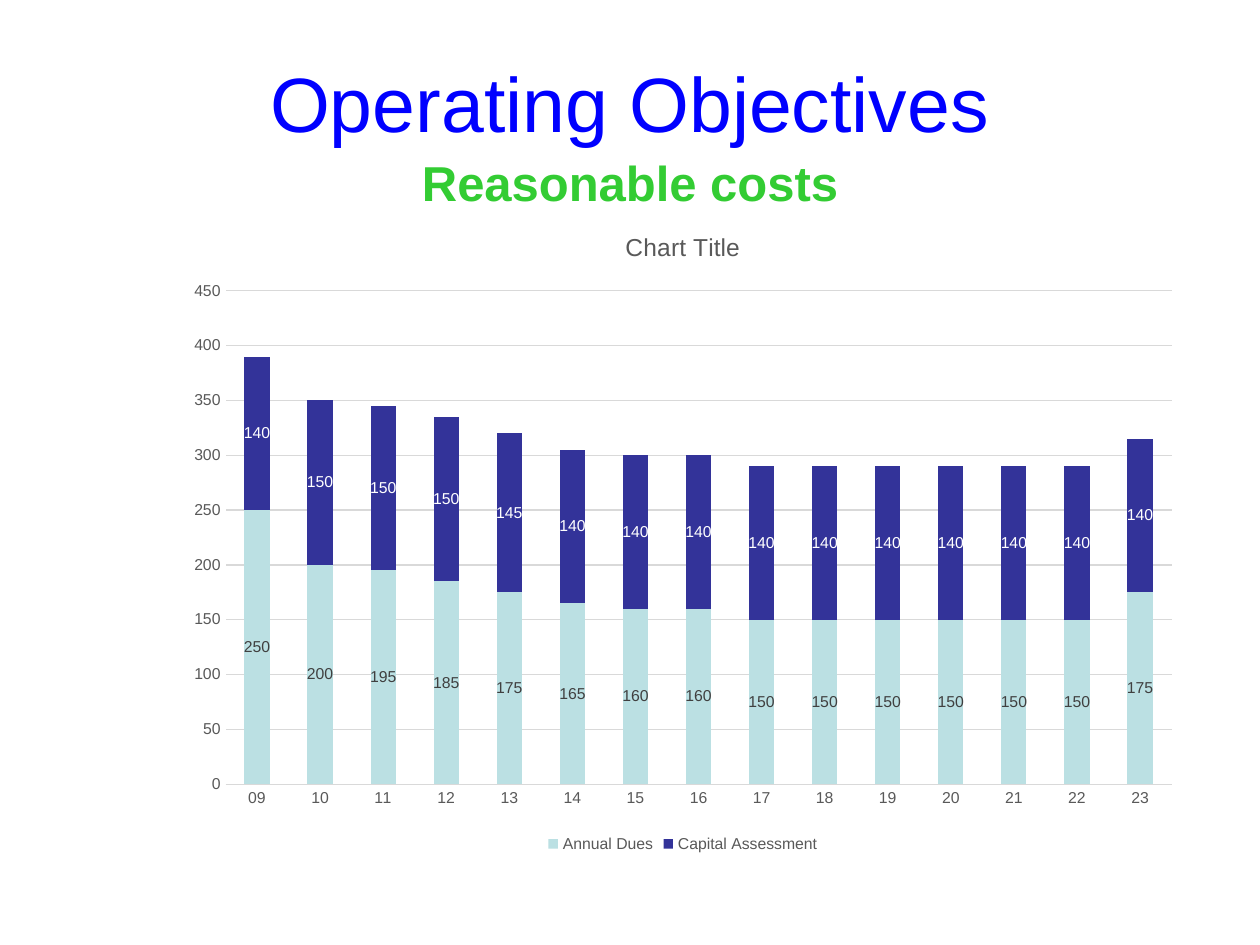
from pptx import Presentation
from pptx.chart.data import CategoryChartData
from pptx.dml.color import RGBColor
from pptx.enum.chart import XL_CHART_TYPE, XL_LABEL_POSITION, XL_LEGEND_POSITION, XL_TICK_MARK
from pptx.enum.text import MSO_ANCHOR, MSO_AUTO_SIZE, PP_ALIGN
from pptx.oxml.xmlchemy import OxmlElement
from pptx.util import Inches, Pt

STACKED = XL_CHART_TYPE.COLUMN_STACKED
CENTER_LABEL = XL_LABEL_POSITION.CENTER
BOTTOM = XL_LEGEND_POSITION.BOTTOM
NO_TICK = XL_TICK_MARK.NONE
CENTER = PP_ALIGN.CENTER

# Content
TITLE = "Operating Objectives"
SUBTITLE = "Reasonable costs"
CHART_TITLE = "Chart Title"
YEARS = [f"{year:02d}" for year in range(9, 24)]
SERIES = [
    ("Annual Dues", "dues", "dark_label",
     [250, 200, 195, 185, 175, 165, 160, 160] + [150] * 6 + [175]),
    ("Capital Assessment", "capital", "light_label",
     [140, 150, 150, 150, 145] + [140] * 10),
]
COLORS = {
    "title": "0000FF", "subtitle": "33CC33", "axis": "595959", "grid": "D9D9D9",
    "dues": "BBE0E3", "capital": "333399",
    "dark_label": "404040", "light_label": "FFFFFF",
}

# Left, top, width, height in inches
TITLE_AREA = (0.5, 0.33, 9, 0.95)
BODY_AREA = (0.5, 1.25, 9, 5.83)
CHART_AREA = (1.38, 1.64, 8.08, 5.17)


def color(name):
    return RGBColor.from_string(COLORS[name])


def style_font(font, size, color_name, bold=False):
    for name, value in {"name": "Arial", "size": Pt(size), "bold": bold}.items():
        setattr(font, name, value)
    font.color.rgb = color(color_name)


def style_line(line):
    line.color.rgb = color("grid")
    line.width = Pt(0.75)


def fill_placeholder(box, area, text, anchor, size, color_name, bold=False):
    for name, value in zip(("left", "top", "width", "height"), area):
        setattr(box, name, Inches(value))
    frame = box.text_frame
    frame.text = text
    frame.word_wrap = True
    frame.auto_size = MSO_AUTO_SIZE.NONE
    frame.vertical_anchor = anchor
    para = frame.paragraphs[0]
    para.alignment = CENTER
    style_font(para.runs[0].font, size, color_name, bold)
    return para


deck = Presentation()
deck.slide_width, deck.slide_height = Inches(10), Inches(7.5)
page = deck.slides.add_slide(deck.slide_layouts[1])

# Title and subtitle
fill_placeholder(page.shapes.title, TITLE_AREA, TITLE, MSO_ANCHOR.MIDDLE, 44, "title")
para = fill_placeholder(page.placeholders[1], BODY_AREA, SUBTITLE,
                        MSO_ANCHOR.TOP, 28, "subtitle", bold=True)
para.line_spacing = 0.8
para.space_before = Pt(5.6)
properties = para._p.get_or_add_pPr()
properties.set("marL", "0")
properties.set("indent", "0")
properties.append(OxmlElement("a:buNone"))

# Stacked column chart
data = CategoryChartData()
data.categories = YEARS
for name, _, _, values in SERIES:
    data.add_series(name, values)
chart = page.shapes.add_chart(STACKED, *map(Inches, CHART_AREA), data).chart
style_font(chart.font, 10, "axis")

chart.has_title = True
chart.chart_title.text_frame.text = CHART_TITLE
style_font(chart.chart_title.text_frame.paragraphs[0].runs[0].font, 14, "axis")
chart.chart_title.include_in_layout = False

chart.has_legend = True
chart.legend.position = BOTTOM
chart.legend.include_in_layout = False
style_font(chart.legend.font, 9, "axis")

# Axes
for axis in (chart.category_axis, chart.value_axis):
    axis.major_tick_mark = axis.minor_tick_mark = NO_TICK
    style_font(axis.tick_labels.font, 9, "axis")
style_line(chart.category_axis.format.line)
values_axis = chart.value_axis
values_axis.minimum_scale, values_axis.maximum_scale, values_axis.major_unit = 0, 450, 50
values_axis.format.line.fill.background()
style_line(values_axis.major_gridlines.format.line)

# Columns and their labels
plot = chart.plots[0]
plot.gap_width, plot.overlap, plot.vary_by_categories = 150, 100, False
for series, (_, fill_color, label_color, _) in zip(plot.series, SERIES):
    series.format.fill.solid()
    series.format.fill.fore_color.rgb = color(fill_color)
    labels = series.data_labels
    labels.show_value = True
    labels.position = CENTER_LABEL
    style_font(labels.font, 9, label_color)

deck.save("out.pptx")
